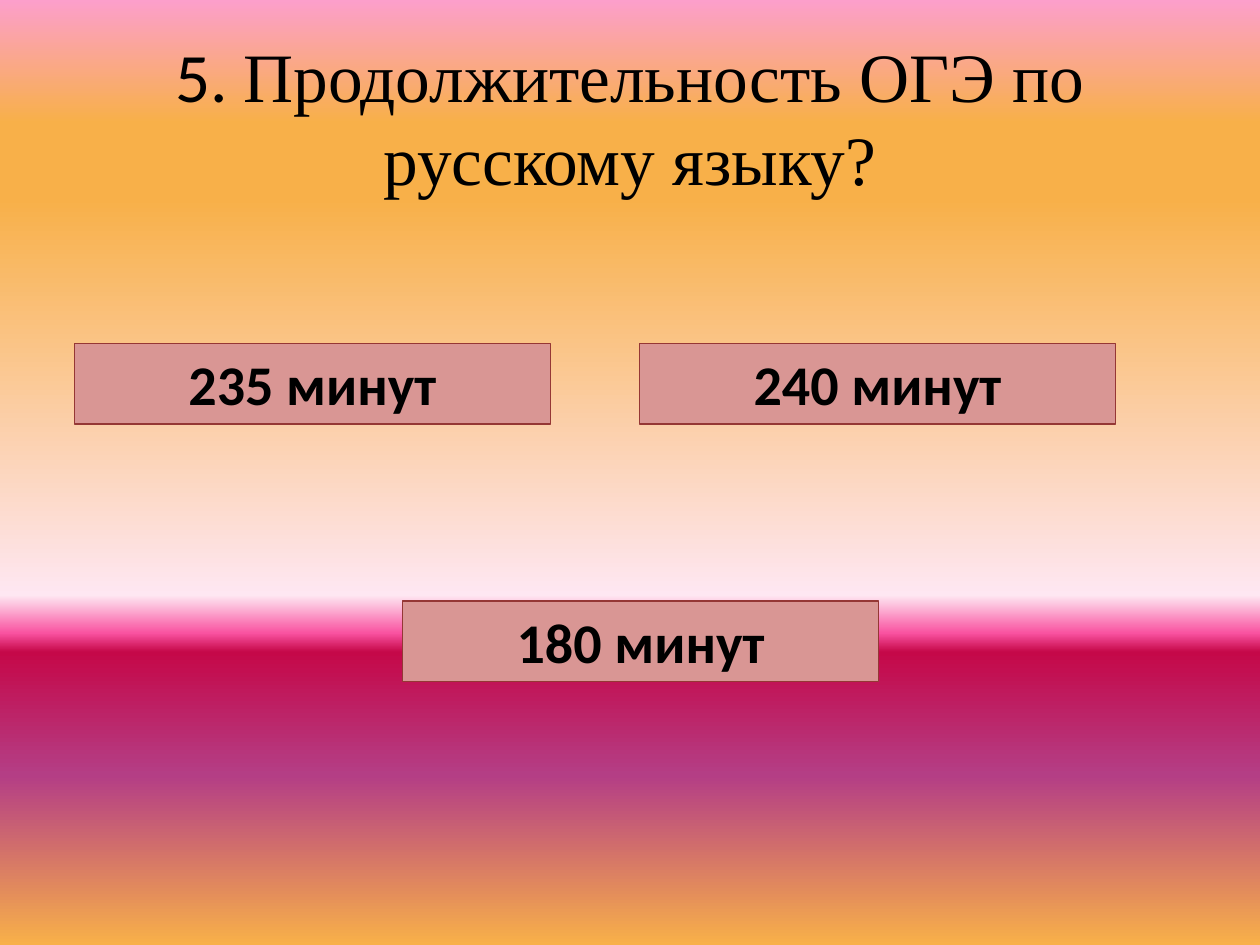
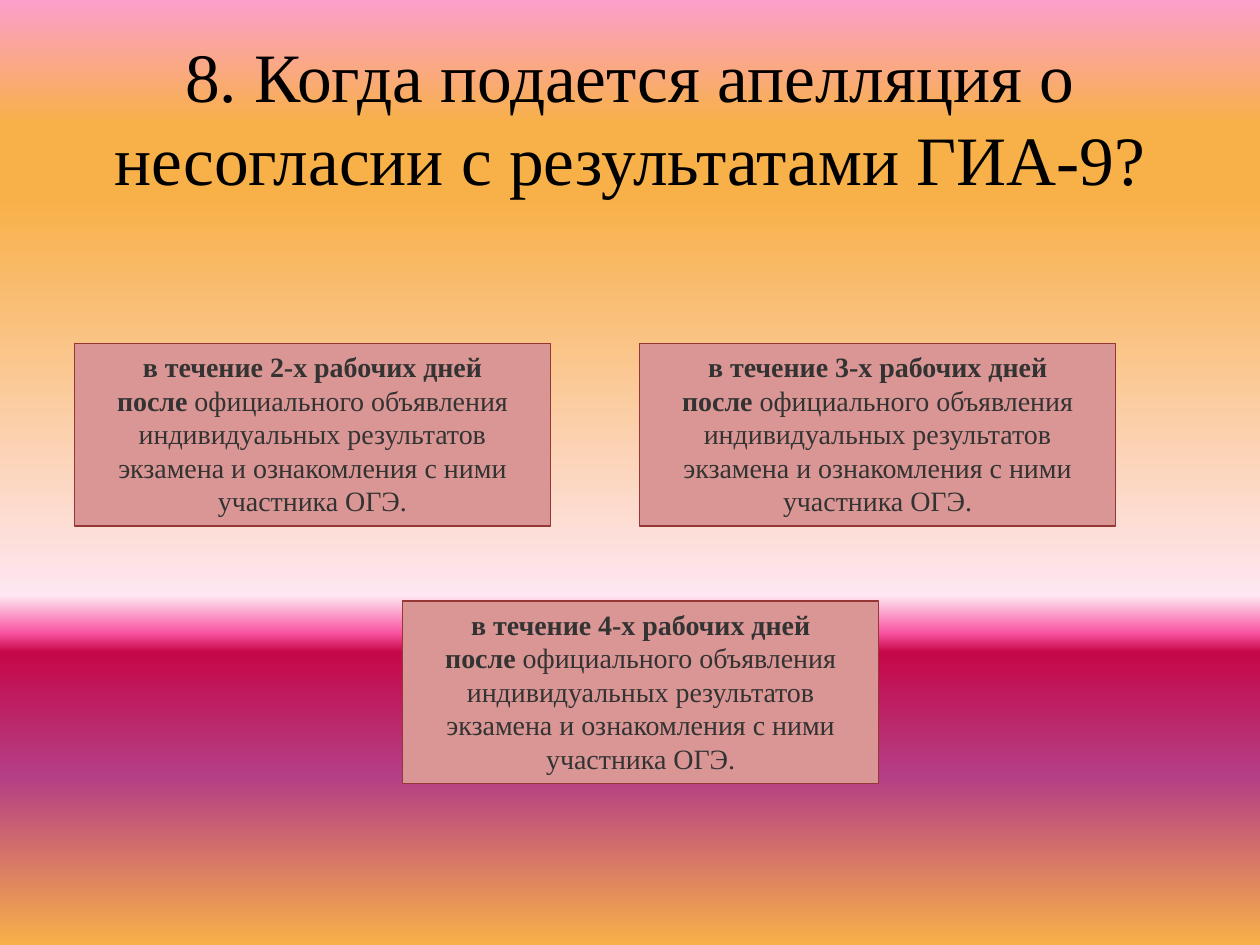
from dataclasses import dataclass
from typing import NamedTuple

from lxml import etree
from pptx import Presentation
from pptx import slide as s
from pptx import util as u
from pptx.dml import color
from pptx.enum import shapes, text
from pptx.oxml import ns
from pptx.text import text as t


@dataclass(frozen=True)
class Theme:
    answer_fill: str = "D99694"
    answer_line: str = "953735"
    black: str = "000000"
    grey: str = "333333"
    sans: str = "Calibri"
    serif: str = "Times New Roman"
    title_size: float = 39.6
    short_size: float = 32
    long_size: float = 16
    backdrop: tuple[tuple[int, str], ...] = (
        (0, "FC9FCB"), (13, "F8B049"), (21, "F8B049"), (63, "FEE7F2"),
        (67, "F952A0"), (69, "C50849"), (82, "B43E85"), (100, "F8B049"),
    )


THEME = Theme()


class Span(NamedTuple):
    words: str
    font: str | None = None
    bold: bool | None = None


class AnswerStyle(NamedTuple):
    height: float
    size: float
    font: str
    ink: str


class Question(NamedTuple):
    title: list[Span]
    answers: list[list[Span]]
    style: AnswerStyle


ANSWER_WIDTH = 3.78
ANSWER_PLACES = ((0.59, 2.725), (3.195, 4.77), (5.075, 2.725))
SHORT = AnswerStyle(0.64, THEME.short_size, THEME.sans, THEME.black)
LONG = AnswerStyle(1.45, THEME.long_size, THEME.serif, THEME.grey)
NO_BREAK_SPACE = chr(160)
APPEAL_END = (
    NO_BREAK_SPACE
    + "официального объявления индивидуальных результатов экзамена и ознакомления с ними участника ОГЭ."
)

QUESTIONS = [
    Question(
        [Span("5. ", THEME.sans), Span("Продолжительность ОГЭ по русскому языку?")],
        [[Span(f"{minutes} минут", bold=True)] for minutes in (235, 180, 240)],
        SHORT,
    ),
    Question(
        [Span("8. Когда подается апелляция о несогласии с результатами ГИА-9?")],
        [[Span(f"в течение {days}-х рабочих дней после", bold=True), Span(APPEAL_END)]
         for days in (2, 4, 3)],
        LONG,
    ),
]


def paint_backdrop(master: s.SlideMaster) -> None:
    fill = master.background.fill
    fill.gradient()
    fill.gradient_angle = 270
    stops = master.element.find(".//" + ns.qn("a:gsLst"))
    for old_stop in list(stops):
        stops.remove(old_stop)
    for percent, tint in THEME.backdrop:
        stop = etree.SubElement(stops, ns.qn("a:gs"), pos=str(percent * 1000))
        etree.SubElement(stop, ns.qn("a:srgbClr"), val=tint)


def write(frame: t.TextFrame, spans: list[Span], size: float, font: str, ink: str) -> None:
    frame.word_wrap = True
    frame.vertical_anchor = text.MSO_ANCHOR.MIDDLE
    para = frame.paragraphs[0]
    para.alignment = text.PP_ALIGN.CENTER
    para.font.size = u.Pt(size)
    para.font.name = font
    para.font.color.rgb = color.RGBColor.from_string(ink)
    for span in spans:
        run = para.add_run()
        run.text = span.words
        run.font.bold = span.bold
        if span.font:
            run.font.name = span.font


def add_title(page: s.Slide, spans: list[Span]) -> None:
    box = page.shapes.add_textbox(u.Inches(0.5), u.Inches(0.3), u.Inches(9), u.Inches(1.25))
    write(box.text_frame, spans, THEME.title_size, THEME.serif, THEME.black)


def add_answer(page: s.Slide, place: tuple[float, float], spans: list[Span],
               style: AnswerStyle) -> None:
    left, top = place
    box = page.shapes.add_shape(
        shapes.MSO_SHAPE.RECTANGLE,
        u.Inches(left), u.Inches(top), u.Inches(ANSWER_WIDTH), u.Inches(style.height),
    )
    box.shadow.inherit = False
    box.fill.solid()
    box.fill.fore_color.rgb = color.RGBColor.from_string(THEME.answer_fill)
    box.line.color.rgb = color.RGBColor.from_string(THEME.answer_line)
    box.line.width = u.Pt(0.75)
    write(box.text_frame, spans, style.size, style.font, style.ink)
    box.text_frame.vertical_anchor = text.MSO_ANCHOR.TOP
    box.text_frame.auto_size = text.MSO_AUTO_SIZE.SHAPE_TO_FIT_TEXT


def main() -> None:
    deck = Presentation()
    deck.slide_width, deck.slide_height = u.Inches(10), u.Inches(7.5)
    paint_backdrop(deck.slide_master)
    for question in QUESTIONS:
        page = deck.slides.add_slide(deck.slide_layouts[6])
        add_title(page, question.title)
        for place, answer in zip(ANSWER_PLACES, question.answers):
            add_answer(page, place, answer, question.style)
    deck.save("out.pptx")


if __name__ == "__main__":
    main()
